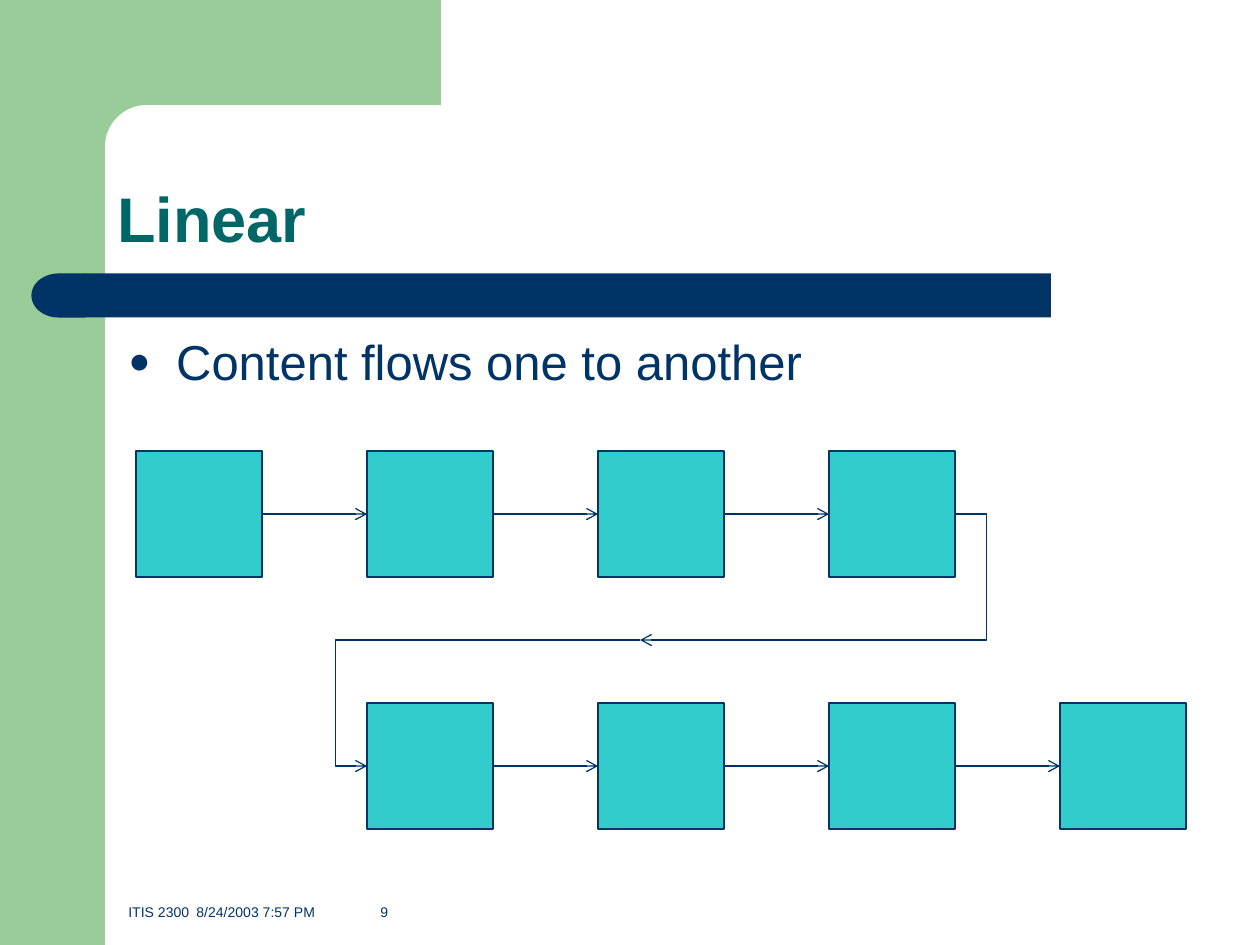
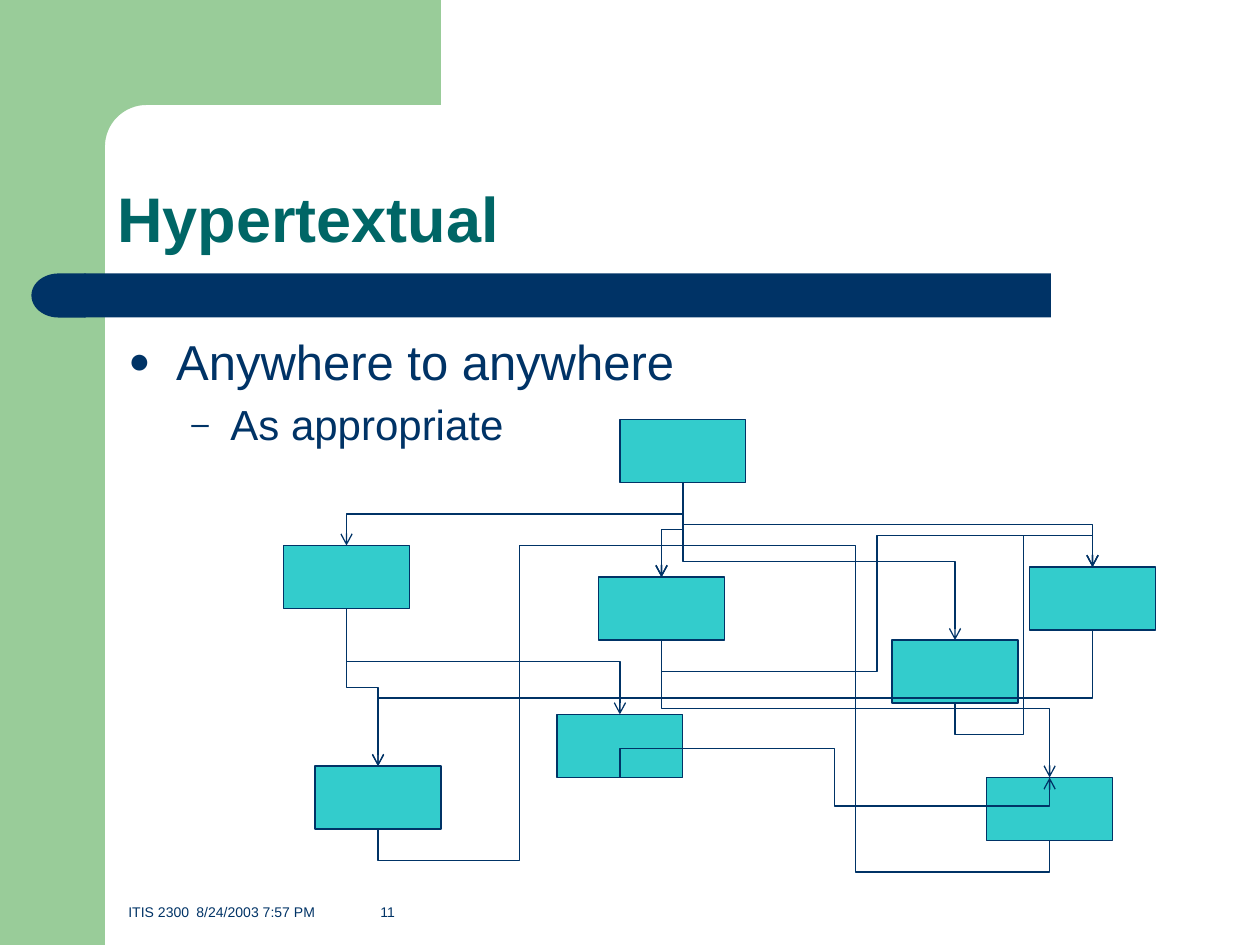
from dataclasses import dataclass
from math import cos, pi, sin

from lxml.etree import SubElement
from pptx import Presentation
from pptx.dml.color import RGBColor
from pptx.enum.shapes import MSO_CONNECTOR, MSO_SHAPE
from pptx.enum.text import MSO_ANCHOR
from pptx.oxml.ns import qn
from pptx.util import Emu, Inches, Pt

FOOT = "ITIS 2300\t8/24/2003 7:57 PM\t{}"
LINEAR = {
    "title": "Linear", "page": 9, "size": (5.92, 0.75),
    "points": [(0, "Content flows one to another")],
    "rows": [(3.58, range(0, 4)), (5.58, range(1, 5))],  # top, columns
}
HYPER = {
    "title": "Hypertextual", "page": 11, "size": (4.75, 1.08),
    "points": [(0, "Anywhere to anywhere"), (1, "As appropriate")],
    "nodes": {  # left, top
        "home": (4.92, 3.33), "mid": (4.75, 4.58), "low": (4.42, 5.67),
        "east": (8.17, 4.5), "inner": (7.08, 5.08), "south": (2.5, 6.08),
        "corner": (7.83, 6.17), "west": (2.25, 4.33),
    },
    "links": [
        ("corner", "mid"), ("mid", "east"), ("home", "east"),
        ("mid", "corner"), ("home", "west"), ("home", "mid"),
        ("west", "south"), ("west", "low"), ("south", "mid"),
        ("low", "corner"), ("home", "inner"), ("inner", "east"),
        ("east", "south"),
    ],
}


@dataclass(frozen=True)
class Theme:
    font: str = "Arial"
    navy: str = "003366"
    teal: str = "006666"
    green: str = "99CC99"
    aqua: str = "33CCCC"
    title: float = 36
    body: tuple = (28, 24)
    foot: float = 8
    rule: float = 0.75


T = Theme()
WIDE, HIGH = 10, 7.5
SIDE, BAND = WIDE / 12, HIGH / 9      # green column width, green band height
BULLETS = [("●", 0.38, -0.38), ("–", 0.81, -0.31)]
TABS = (0.54, 2)
STEP, BOX, NODE_H = 11 / 6, 1, 0.5
STUB = 0.25                           # how far an elbow runs past its end
THIN = Emu(1588)                      # least extent of a flat elbow
TOP, LEFT, BOTTOM, RIGHT = range(4)


def rgb(code):
    return RGBColor.from_string(code)


def paint(shape, fill, line=None):
    shape.shadow.inherit = False
    shape.fill.solid()
    shape.fill.fore_color.rgb = rgb(fill)
    if line:
        shape.line.color.rgb = rgb(line)
        shape.line.width = Pt(T.rule)
    else:
        shape.line.fill.background()
    return shape


def block(slide, kind, x, y, w, h, fill, line=None):
    shape = slide.shapes.add_shape(kind, *map(Inches, (x, y, w, h)))
    return paint(shape, fill, line)


def add(parent, tag, **attrs):
    return SubElement(parent, qn(tag), {k: str(v) for k, v in attrs.items()})


def label(slide, x, y, w, h, anchor=MSO_ANCHOR.TOP):
    frame = slide.shapes.add_textbox(*map(Inches, (x, y, w, h))).text_frame
    frame.word_wrap = True
    frame.vertical_anchor = anchor
    return frame


def style(para, text, size, color, bold=False):
    para.text = text
    font = para.font
    font.name, font.size, font.bold = T.font, Pt(size), bold
    font.color.rgb = rgb(color)


def bullet(para, level):
    mark, margin, hang = BULLETS[level]
    para.level = level
    props = para._p.get_or_add_pPr()
    props.set("marL", str(Inches(margin)))
    props.set("indent", str(Inches(hang)))
    add(add(props, "a:spcBef"), "a:spcPct", val=20000)
    add(add(props, "a:buClr"), "a:srgbClr", val=T.navy)
    add(props, "a:buSzPct", val=75000)
    add(props, "a:buFont", typeface=T.font)
    add(props, "a:buChar", char=mark)


def frame(slide):
    """Draw the green corner and the navy bar."""
    block(slide, MSO_SHAPE.RECTANGLE, 0, 0, SIDE, HIGH, T.green)
    r = 0.33
    turns = [pi / 2 * i / 16 for i in range(17)]
    curve = [(SIDE + r - r * sin(a), BAND + r - r * cos(a)) for a in turns]
    dots = [(3.5, BAND), *curve, (SIDE, 1.28), (0.5, 1.28), (0.5, 0)]
    pen = slide.shapes.build_freeform(Inches(3.5), 0)
    pen.add_line_segments([(Inches(x), Inches(y)) for x, y in dots])
    paint(pen.convert_to_shape(), T.green)
    block(slide, MSO_SHAPE.RECTANGLE, 0.67, 2.17, 7.67, 0.35, T.navy)
    cap = block(slide, MSO_SHAPE.FLOWCHART_DELAY, 0.25, 2.17, 0.43, 0.35, T.navy)
    cap._element.spPr.xfrm.set("flipH", "1")


def start(deck, data):
    """Add a slide with all that both slides share."""
    slide = deck.slides.add_slide(deck.slide_layouts[6])
    frame(slide)
    head = label(slide, SIDE, BAND, 8.67, 1.25, MSO_ANCHOR.BOTTOM).paragraphs[0]
    style(head, data["title"], T.title, T.teal, True)
    head.line_spacing = 0.9
    body = label(slide, 0.92, 2.58, *data["size"])
    for i, (level, text) in enumerate(data["points"]):
        para = body.add_paragraph() if i else body.paragraphs[0]
        style(para, text, T.body[level], T.navy)
        bullet(para, level)
    foot = label(slide, 0.92, 6.83, 8.59, 0.52, MSO_ANCHOR.BOTTOM).paragraphs[0]
    style(foot, FOOT.format(data["page"]), T.foot, T.navy)
    stops = add(foot._p.get_or_add_pPr(), "a:tabLst")
    for stop in TABS:
        add(stops, "a:tab", pos=Inches(stop), algn="l")
    return slide


def site(box, side):
    """Return the middle of one side of a box."""
    x = {LEFT: 0, RIGHT: box.width}.get(side, box.width // 2)
    y = {TOP: 0, BOTTOM: box.height}.get(side, box.height // 2)
    return box.left + x, box.top + y


def arrow(slide, kind, tail=None, head=None):
    """Add an arrow; tail and head are (box, side) or None."""
    line = slide.shapes.add_connector(kind, 0, 0, 0, 0)
    if tail:
        line.begin_connect(*tail)
    if head:
        line.end_connect(*head)
    line.line.color.rgb = rgb(T.navy)
    line.line.width = Pt(T.rule)
    props = line._element.spPr
    add(props.find(qn("a:ln")), "a:tailEnd", type="arrow")
    add(props, "a:effectLst")
    return line


def bend(line, mid, size, turn, flips, adjust):
    """Shape an elbow: centre, extent before turning, turn, flips, bends."""
    (x, y), (w, h) = mid, size
    line.left, line.top = round(x - w / 2), round(y - h / 2)
    line.width, line.height = w, h
    props = line._element.spPr
    props.xfrm.set("rot", str(turn * 60000))
    for axis in "HV":
        props.xfrm.set("flip" + axis, str(int(axis in flips)))
    geom = props.find(qn("a:prstGeom"))
    geom.set("prst", f"bentConnector{len(adjust) + 2}")
    guides = geom.find(qn("a:avLst"))
    if guides is None:
        guides = add(geom, "a:avLst")
    for i, share in enumerate(adjust, 1):
        add(guides, "a:gd", name=f"adj{i}", fmla=f"val {round(share * 100000)}")


def center(p, q):
    return (p[0] + q[0]) / 2, (p[1] + q[1]) / 2


def drop(slide, a, b):
    """Link the bottom of a to the top of b, looping round if b is higher."""
    tail, head = (a, BOTTOM), (b, TOP)
    p, q = site(*tail), site(*head)
    dx, dy = q[0] - p[0], q[1] - p[1]
    if abs(dy) < THIN:
        dy = 0
    size = max(abs(dy), THIN), abs(dx)
    over = Inches(STUB) / size[0]
    adjust = [0.5] if dy > 0 else [-over, 0.5, 1 + over]
    if dx > 0 and dy >= 0:
        turn, flips = 270, "H"
    else:
        turn = 90
        flips = ("H" if dy < 0 else "") + ("V" if dx > 0 else "")
    line = arrow(slide, MSO_CONNECTOR.ELBOW, tail, head)
    bend(line, center(p, q), size, turn, flips, adjust)


def linear(deck):
    slide = start(deck, LINEAR)
    rows = []
    for top, cols in LINEAR["rows"]:
        row = [block(slide, MSO_SHAPE.RECTANGLE, 1.08 + STEP * col, top,
                     BOX, BOX, T.aqua, T.navy) for col in cols]
        for a, b in zip(row, row[1:]):
            arrow(slide, MSO_CONNECTOR.STRAIGHT, (a, RIGHT), (b, LEFT))
        rows.append(row)
    tail, head = (rows[0][-1], RIGHT), (rows[1][0], LEFT)
    p, q = site(*tail), site(*head)
    rest = Inches(5.08), round(center(p, q)[1])
    out = p[0] - rest[0], rest[1] - p[1]
    back = rest[0] - q[0], q[1] - rest[1]
    bend(arrow(slide, MSO_CONNECTOR.ELBOW, tail=tail), center(p, rest), out,
         0, "H", [-Inches(STUB) / out[0]])
    bend(arrow(slide, MSO_CONNECTOR.ELBOW, head=head), center(rest, q), back,
         180, "V", [1 + Inches(STUB) / back[0]])


def hyper(deck):
    slide = start(deck, HYPER)
    nodes = {name: block(slide, MSO_SHAPE.RECTANGLE, x, y, BOX, NODE_H,
                         T.aqua, T.navy)
             for name, (x, y) in HYPER["nodes"].items()}
    for a, b in HYPER["links"]:
        drop(slide, nodes[a], nodes[b])


def main():
    deck = Presentation()
    deck.slide_width, deck.slide_height = Inches(WIDE), Inches(HIGH)
    linear(deck)
    hyper(deck)
    deck.save("out.pptx")


if __name__ == "__main__":
    main()
